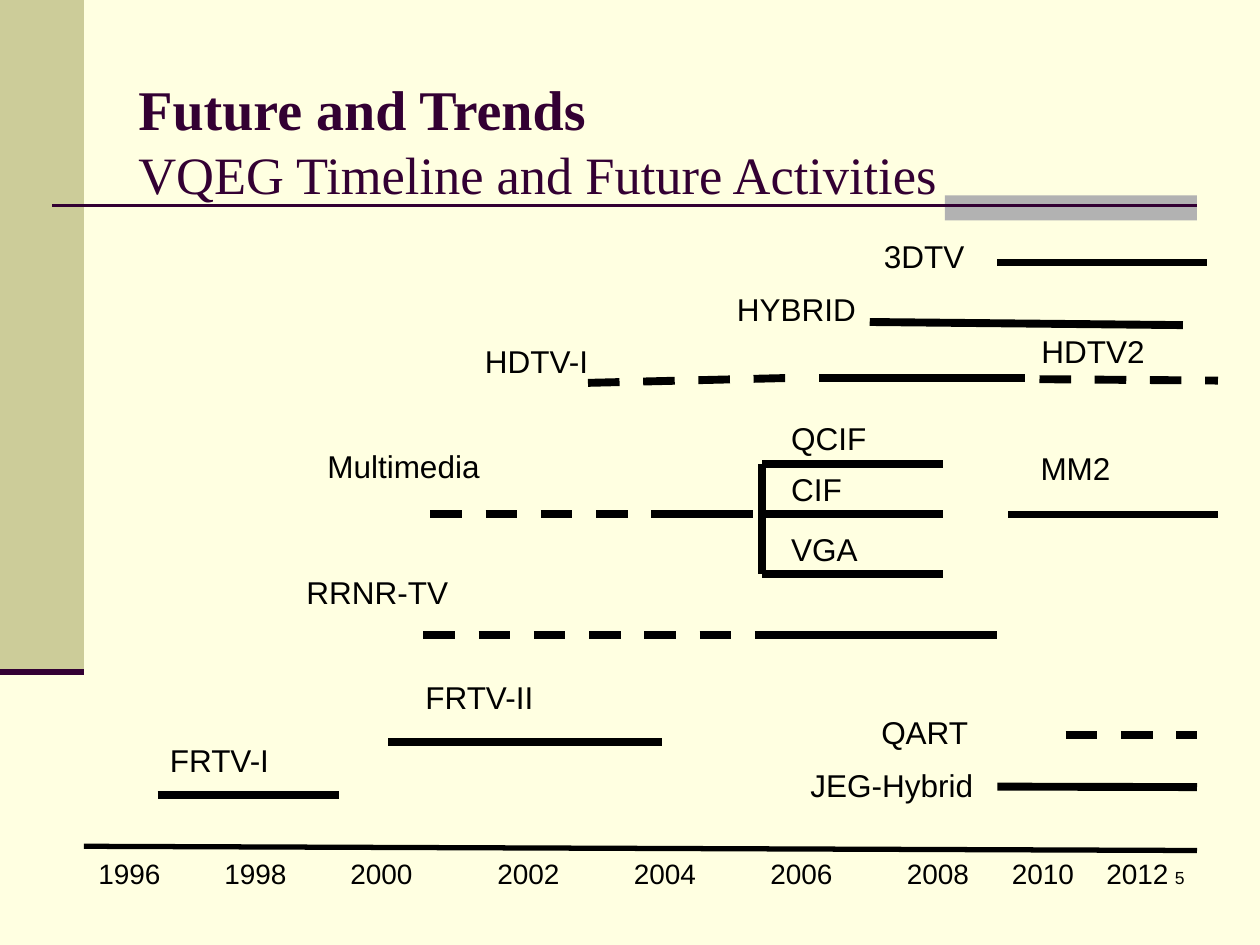
"""Build the VQEG timeline slide with its project bars, labels and year axis."""
from dataclasses import dataclass

from lxml import etree
from pptx import Presentation
from pptx.dml.color import RGBColor
from pptx.enum.dml import MSO_LINE
from pptx.enum.shapes import MSO_CONNECTOR, MSO_SHAPE
from pptx.enum.text import MSO_ANCHOR, PP_ALIGN
from pptx.oxml.ns import qn
from pptx.util import Pt

STRAIGHT = MSO_CONNECTOR.STRAIGHT
RECTANGLE = MSO_SHAPE.RECTANGLE
SOLID, DASH = MSO_LINE.SOLID, MSO_LINE.DASH
LEFT, CENTER, RIGHT = PP_ALIGN.LEFT, PP_ALIGN.CENTER, PP_ALIGN.RIGHT
MIDDLE = MSO_ANCHOR.MIDDLE


@dataclass(frozen=True)
class Theme:
    background: RGBColor = RGBColor.from_string("FFFFE1")
    olive: RGBColor = RGBColor.from_string("CCCC99")
    gray: RGBColor = RGBColor.from_string("B2B2B2")
    plum: RGBColor = RGBColor.from_string("330033")
    black: RGBColor = RGBColor.from_string("000000")
    title_font: str = "Times New Roman"
    body_font: str = "Arial"
    title_size: int = 32
    subtitle_size: int = 30
    label_size: int = 18
    year_size: int = 16
    number_size: int = 10
    bar_width: float = 4.5
    axis_width: float = 3


theme = Theme()
presentation = Presentation()
presentation.slide_width, presentation.slide_height = Pt(720), Pt(540)
slide = presentation.slides.add_slide(presentation.slide_layouts[6])
slide.background.fill.solid()
slide.background.fill.fore_color.rgb = theme.background


def add_line(x1, y1, x2, y2, width=theme.bar_width, color=theme.black, dash=SOLID):
    connector = slide.shapes.add_connector(STRAIGHT, Pt(x1), Pt(y1), Pt(x2), Pt(y2))
    connector.line.width = Pt(width)
    connector.line.color.rgb = color
    connector.line.dash_style = dash
    etree.SubElement(connector._element.spPr, qn("a:effectLst"))


def add_label(text, left, top, width, height, size=theme.label_size, align=LEFT):
    frame = slide.shapes.add_textbox(Pt(left), Pt(top), Pt(width), Pt(height)).text_frame
    frame.word_wrap = True
    frame.text = text
    paragraph = frame.paragraphs[0]
    paragraph.alignment = align
    paragraph.font.name = theme.body_font
    paragraph.font.size = Pt(size)
    paragraph.font.color.rgb = theme.black


for left, top, width, height, color in [
    (0, 0, 48, 384, theme.olive),
    (540, 111.6, 144, 14.4, theme.gray),
]:
    panel = slide.shapes.add_shape(RECTANGLE, Pt(left), Pt(top), Pt(width), Pt(height))
    panel.shadow.inherit = False
    panel.fill.solid()
    panel.fill.fore_color.rgb = color
    panel.line.fill.background()

add_line(30, 117.5, 684, 117.5, 1.5, theme.plum)
add_line(0, 384, 48, 384, 3.5, theme.plum)

heading = slide.shapes.add_textbox(Pt(72), Pt(48), Pt(612), Pt(64)).text_frame
heading.word_wrap = True
heading.vertical_anchor = MIDDLE
heading.text = "Future and Trends\vVQEG Timeline and Future Activities"
heading_styles = [(theme.title_size, True), (theme.subtitle_size, False)]
for run, (size, bold) in zip(heading.paragraphs[0].runs, heading_styles):
    run.font.name = theme.title_font
    run.font.size = Pt(size)
    run.font.bold = bold
    run.font.color.rgb = theme.plum

add_line(48, 483.6, 684, 486, theme.axis_width)
year_lefts = [48, 120, 192, 276, 354, 432, 510, 570, 624]
for index, left in enumerate(year_lefts):
    add_label(str(1996 + 2 * index), left, 486, 52, 26.6, theme.year_size, CENTER)

solid_bars = [
    (90, 454.5, 194, 454.5),
    (222, 424, 378, 424),
    (468, 216, 585.5, 216),
    (448, 363, 570, 363),
    (383, 293.5, 430.5, 293.5),
    (497, 184, 676, 185.8),
    (570, 150, 690, 150),
    (576, 294, 696, 294),
    (570, 449.5, 684, 449.8),
]
dashed_bars = [
    (336, 218.8, 450, 216),
    (246, 293.5, 392, 293.5),
    (242, 363, 448, 363),
    (594, 216.7, 696, 217.5),
    (609, 420, 684, 420),
]
for bars, dash in [(solid_bars, SOLID), (dashed_bars, DASH)]:
    for bar in bars:
        add_line(*bar, dash=dash)

branch_x, branch_end = 435.5, 539
branch_levels = [265, 293.5, 328]
for level in branch_levels:
    add_line(branch_x, level, branch_end, level)
for upper, lower in zip(branch_levels, branch_levels[1:]):
    add_line(branch_x, upper, branch_x, lower)

project_labels = [
    ("FRTV-I", 90, 420, 85),
    ("FRTV-II", 236, 384, 85),
    ("HDTV-I", 270, 192, 85),
    ("RRNR-TV", 168, 324, 137.5),
    ("Multimedia", 180, 252, 102),
    ("QCIF", 445, 236, 71),
    ("CIF", 445, 265, 47.5),
    ("VGA", 445, 299.5, 65.5),
    ("HYBRID", 414, 162, 96.5),
    ("3DTV", 498, 132, 90),
    ("HDTV2", 588, 186, 85),
    ("MM2", 587.5, 253, 73),
    ("QART", 496.5, 404, 73),
    ("JEG-Hybrid", 456, 434, 120),
]
for text, left, top, width in project_labels:
    add_label(text, left, top, width, 29)

add_label("5", 534, 492, 150, 36, theme.number_size, RIGHT)

presentation.save("out.pptx")
